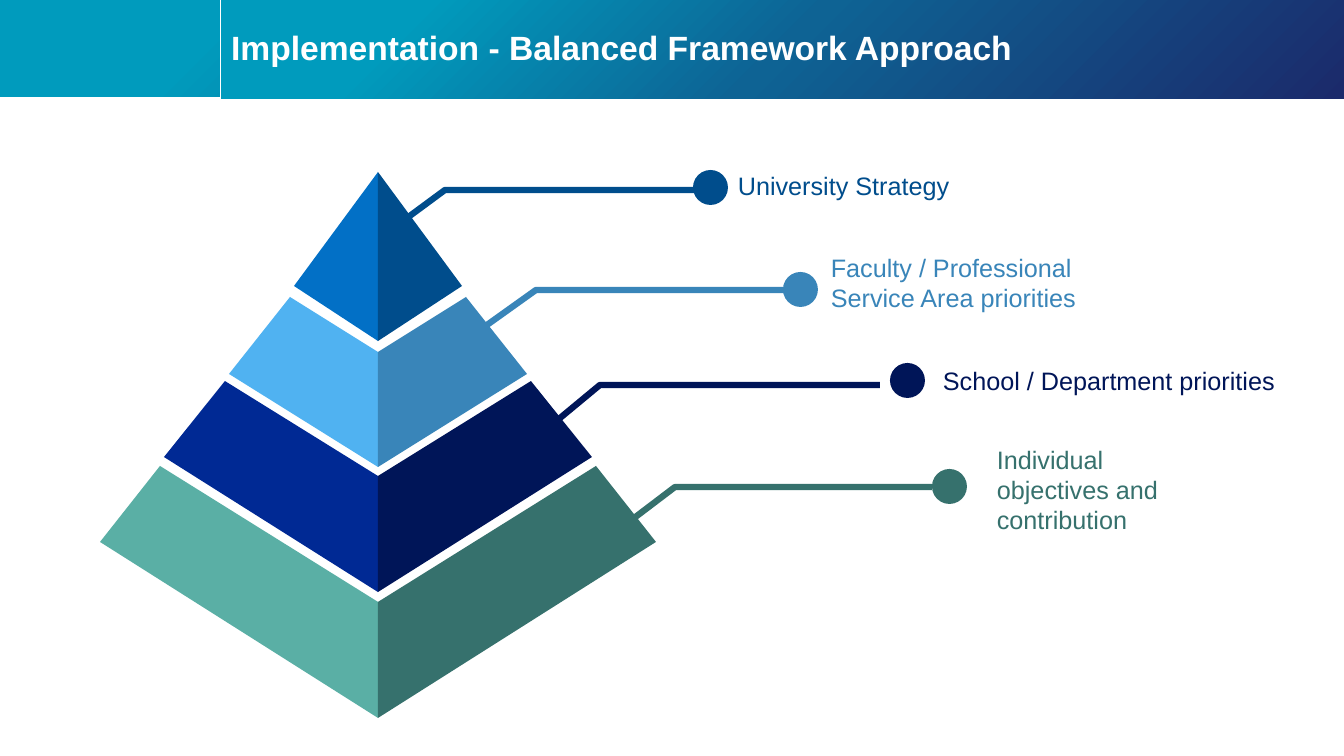
from copy import deepcopy

from lxml import etree
from pptx import Presentation
from pptx import util as u
from pptx.dml.color import RGBColor
from pptx.enum import shapes, text
from pptx.oxml.ns import qn

PX = 914400 / 100.8
THEME = {
    "font": "Arial",
    "white": "FFFFFF",
    "band": [(0.17, "009BBD"), (0.5, "0E6394"), (1, "1B2A6B")],
    "light": ["0270C6", "50B2F1", "002994", "5AAFA5"],
    "dark": ["004D8C", "3985B9", "001558", "36716D"],
    "title": 24,
    "label": 18,
    "rule": 0.5,
    "lead": 4.5,
}
TIERS = [
    (0, 84, 0, 114, 0, 169),
    (88, 149, 125, 202, 180, 295),
    (153, 214, 209, 285, 304, 420),
    (218, 278, 294, 370, 430, 546),
]
CALLS = [
    ("University Strategy",
     [(0, 70), (61, 25), (327, 25)], (309, 5), (344, 0, 342, 40)),
    ("Faculty / Professional Service Area priorities",
     [(96, 165), (152, 125), (401, 125)], (399, 107), (437, 82, 342, 72)),
    ("School / Department priorities",
     [(152, 273), (216, 220), (496, 220)], (506, 198), (549, 195, 363, 40)),
    ("Individual objectives and contribution",
     [(233, 366), (291, 322), (548, 322)], (548, 304), (603, 274, 235, 102)),
]
DOT = 35


def px(*vals):
    return [u.Emu(round(v * PX)) for v in vals]


def rgb(hue):
    return RGBColor.from_string(hue)


def put(item, form):
    for key, val in form.items():
        setattr(item, key, val)


def paint(shape, hue):
    shape.shadow.inherit = False
    shape.fill.solid()
    shape.fill.fore_color.rgb = rgb(hue)
    shape.line.fill.background()


def write(frame, words, hue, size, bold, frame_form, para_form):
    put(frame, {"word_wrap": True, **frame_form})
    frame.text = words
    para = frame.paragraphs[0]
    put(para, {"alignment": text.PP_ALIGN.LEFT, **para_form})
    put(para.font, {"name": THEME["font"], "size": u.Pt(size), "bold": bold})
    para.font.color.rgb = rgb(hue)


def trace(slide, box, points, close):
    spots = [(box[0] + x, box[1] + y) for x, y in points]
    path = slide.shapes.build_freeform(*spots[0], scale=PX)
    path.add_line_segments(spots[1:], close=close)
    return path.convert_to_shape()


def blend(slide, box):
    band = slide.shapes.add_shape(shapes.MSO_SHAPE.RECTANGLE, *px(*box))
    band.shadow.inherit = False
    band.line.fill.background()
    band.fill.gradient()
    band.fill.gradient_angle = 315
    stops = next(band._element.iter(qn("a:gsLst")))
    stops.append(deepcopy(stops[0]))
    for stop, (place, hue) in zip(band.fill.gradient_stops, THEME["band"]):
        stop.position = place
        stop.color.rgb = rgb(hue)


def header(slide, box):
    left, top, width, height = box
    split = 221
    blend(slide, (left, top - 2, width, height))
    blend(slide, (left + split, top, width - split, height))
    rule = slide.shapes.add_connector(
        shapes.MSO_CONNECTOR.STRAIGHT,
        *px(left + split - 1, top, left + split - 1, top + height))
    rule.line.color.rgb = rgb(THEME["white"])
    rule.line.width = u.Pt(THEME["rule"])
    etree.SubElement(rule._element.spPr, qn("a:effectLst"))
    title = slide.shapes.title
    spot = px(left + split, top + 11, width - split, 77)
    put(title, dict(zip(("left", "top", "width", "height"), spot)))
    write(title.text_frame, "Implementation - Balanced Framework Approach",
          THEME["white"], THEME["title"], True,
          {"auto_size": text.MSO_AUTO_SIZE.NONE,
           "vertical_anchor": text.MSO_ANCHOR.MIDDLE},
          {"line_spacing": 0.9})
    slide.shapes._spTree.append(title._element)


def leads(slide, box):
    for (_, points, _, _), hue in zip(CALLS, THEME["dark"]):
        lead = trace(slide, box, points, False)
        lead.shadow.inherit = False
        lead.fill.background()
        lead.line.color.rgb = rgb(hue)
        lead.line.width = u.Pt(THEME["lead"])


def pyramid(slide, box):
    mid = box[2] // 2
    for side, hues in ((-1, THEME["light"]), (1, THEME["dark"])):
        for tier, hue in zip(TIERS, hues):
            inner, outer, high, low, notch, tip = tier
            points = [(mid, notch), (mid + side * inner, high),
                      (mid + side * outer, low), (mid, tip)]
            paint(trace(slide, box, points, True), hue)


def labels(slide, box):
    left, top = box[:2]
    for (words, _, dot, area), hue in zip(CALLS, THEME["dark"]):
        mark = slide.shapes.add_shape(
            shapes.MSO_SHAPE.OVAL,
            *px(left + dot[0], top + dot[1], DOT, DOT))
        paint(mark, hue)
        note = slide.shapes.add_textbox(
            *px(left + area[0], top + area[1], *area[2:]))
        write(note.text_frame, words, hue, THEME["label"], False,
              {"auto_size": text.MSO_AUTO_SIZE.SHAPE_TO_FIT_TEXT}, {})


def main():
    deck = Presentation()
    deck.slide_width, deck.slide_height = px(1344, 756)
    slide = deck.slides.add_slide(deck.slide_layouts[5])
    calls = (384, 165, 912, 376)
    header(slide, (0, 0, 1344, 99))
    leads(slide, calls)
    pyramid(slide, (100, 172, 556, 546))
    labels(slide, calls)
    deck.save("out.pptx")


if __name__ == "__main__":
    main()
